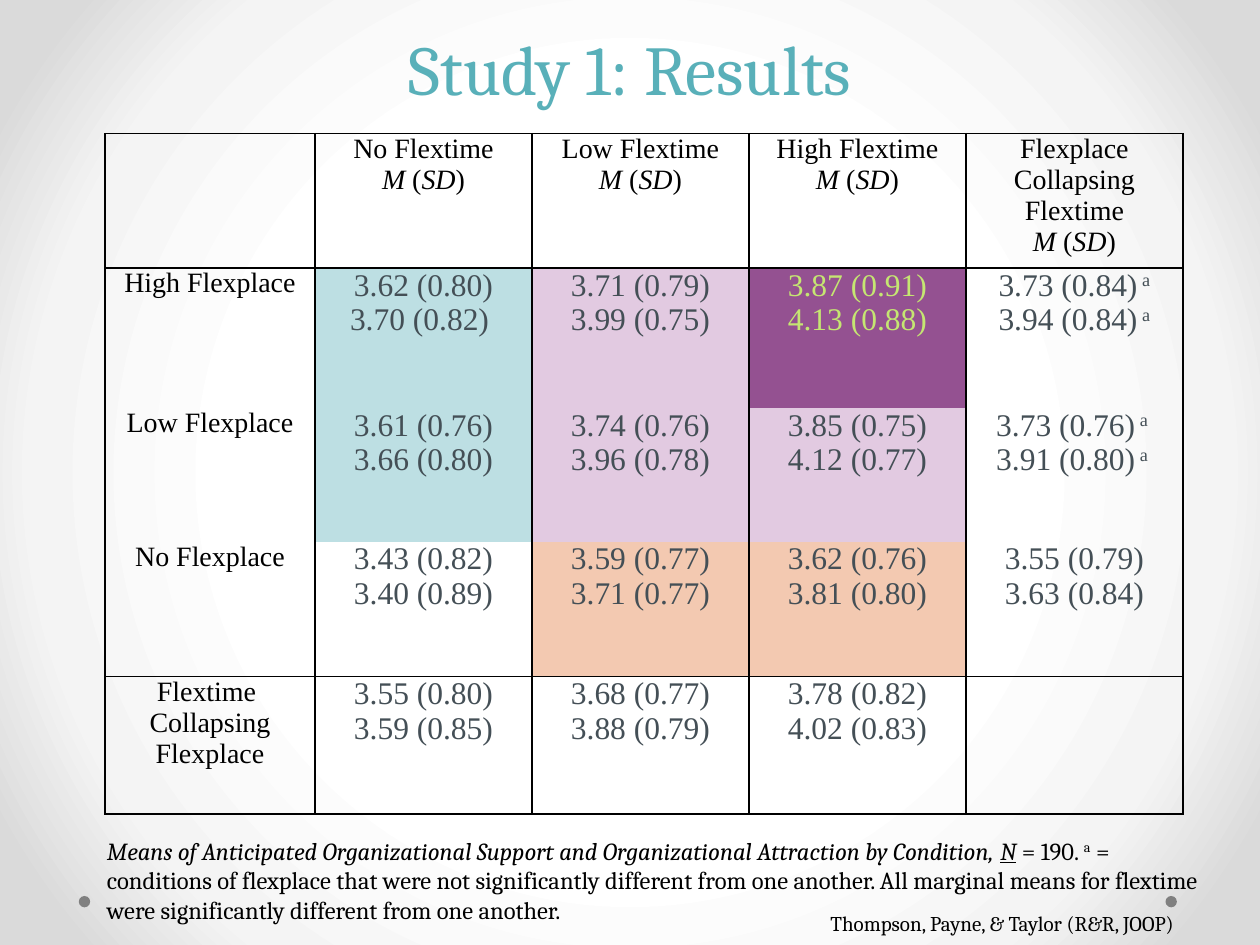
import pptx
import pptx.dml.color
import pptx.enum.shapes
import pptx.enum.text
import pptx.oxml
import pptx.oxml.ns
import pptx.util
from lxml import etree

Pt = pptx.util.Pt
ALIGN = pptx.enum.text.PP_ALIGN
ANCHOR = pptx.enum.text.MSO_ANCHOR
SERIF, TITLE_FONT = "Times New Roman", "Cambria"
BLACK, SLATE, LIME, TEAL = "000000", "444F56", "C5E672", "59B0B9"
AQUA, LILAC, PURPLE, PEACH = "BDDFE3", "E2CAE1", "945191", "F3C9B1"

MEAN_SD = [("M", "i"), (" (", ""), ("SD", "i"), (")", "")]
HEADERS = [["No Flextime"], ["Low Flextime"], ["High Flextime"],
           ["Flexplace", "Collapsing Flextime"]]
ROW_LABELS = [["High Flexplace"], ["Low Flexplace"], ["No Flexplace"],
              ["Flextime ", "Collapsing Flexplace"]]
MEANS = [
    [["3.62 (0.80)", "3.70 (0.82) "], ["3.71 (0.79)", "3.99 (0.75)"],
     ["3.87 (0.91)", "4.13 (0.88)"],
     [[("3.73 (0.84)", ""), (" a", "^")], [("3.94 (0.84)", ""), (" a", "^")]]],
    [["3.61 (0.76)", "3.66 (0.80)"], ["3.74 (0.76)", "3.96 (0.78)"],
     ["3.85 (0.75)", "4.12 (0.77)"],
     [[("3.73 (0.76)", ""), (" a ", "^")], [("3.91 (0.80)", ""), (" a ", "^")]]],
    [["3.43 (0.82)", "3.40 (0.89)"], ["3.59 (0.77)", "3.71 (0.77)"],
     ["3.62 (0.76)", "3.81 (0.80)"], ["3.55 (0.79)", "3.63 (0.84)"]],
    [["3.55 (0.80)", "3.59 (0.85)"], ["3.68 (0.77)", "3.88 (0.79)"],
     ["3.78 (0.82)", "4.02 (0.83)"], []],
]
FILLS = [[AQUA, LILAC, PURPLE, None], [AQUA, LILAC, LILAC, None],
         [None, PEACH, PEACH, None], [None] * 4]
COLUMN_WIDTHS = [120, 124, 124, 124, 124]
ROW_HEIGHTS = [73.5, 80, 76.5, 77, 78.5]
RULED_ABOVE, RULED_BELOW = (0, 1, 4), (0, 3, 4)

NOTE = [
    ("Means of Anticipated Organizational Support and Organizational "
     "Attraction by Condition, ", "i"),
    ("N", "iu"), (" = 190. ", ""), ("a", "^"),
    (" = conditions of flexplace that were not significantly different from "
     "one another. All marginal means for flextime were significantly "
     "different from one another.", ""),
]


def rgb(color):
    return pptx.dml.color.RGBColor.from_string(color)


def paint_background(page):
    """Fill the page with a radial gradient, white in the middle."""
    stops = [(50, "FFFFFF"), (76, "F4F4F4"), (92, "DADADA")]
    stop_xml = "".join(f'<a:gs pos="{place * 1000}"><a:srgbClr val="{color}"/></a:gs>'
                       for place, color in stops)
    background = pptx.oxml.parse_xml(
        f'<p:bg {pptx.oxml.ns.nsdecls("p", "a")}><p:bgPr><a:gradFill rotWithShape="1">'
        f'<a:gsLst>{stop_xml}</a:gsLst><a:path path="circle">'
        '<a:fillToRect l="50000" t="50000" r="50000" b="50000"/></a:path>'
        '</a:gradFill><a:effectLst/></p:bgPr></p:bg>')
    page.element.cSld.insert(0, background)


def write(frame, paragraphs, font, size, color, align):
    """Each paragraph is a string or a list of (text, marks): i, u, ^ (raised)."""
    for index, content in enumerate(paragraphs):
        para = frame.paragraphs[0] if index == 0 else frame.add_paragraph()
        para.alignment = align
        spans = [(content, "")] if isinstance(content, str) else content
        for text, marks in spans:
            span = para.add_run()
            span.text = text
            span.font.name, span.font.size = font, Pt(size)
            span.font.color.rgb = rgb(color)
            span.font.italic = "i" in marks
            span.font.underline = "u" in marks
            if "^" in marks:
                span.font._element.set("baseline", "30000")


def add_text(page, left, top, width, height, content, size, color, align,
             anchor=ANCHOR.TOP):
    box = page.shapes.add_textbox(Pt(left), Pt(top), Pt(width), Pt(height))
    box.text_frame.word_wrap = True
    box.text_frame.vertical_anchor = anchor
    write(box.text_frame, [content], TITLE_FONT, size, color, align)


def add_dot(page, left, top, size):
    dot = page.shapes.add_shape(pptx.enum.shapes.MSO_SHAPE.OVAL,
                                Pt(left), Pt(top), Pt(size), Pt(size))
    dot.shadow.inherit = False
    dot.fill.solid()
    dot.fill.fore_color.rgb = rgb("808080")
    dot.line.fill.background()


def set_borders(cell, row):
    ruled = {"L": True, "R": True, "T": row in RULED_ABOVE, "B": row in RULED_BELOW}
    properties = cell._tc.get_or_add_tcPr()
    for index, (side, visible) in enumerate(ruled.items()):
        line = etree.Element(pptx.oxml.ns.qn(f"a:ln{side}"), w=str(Pt(1)))
        if visible:
            fill = etree.SubElement(line, pptx.oxml.ns.qn("a:solidFill"))
            etree.SubElement(fill, pptx.oxml.ns.qn("a:srgbClr"), val=BLACK)
        else:
            etree.SubElement(line, pptx.oxml.ns.qn("a:noFill"))
        properties.insert(index, line)


def fill_cell(cell, row, paragraphs, size, color, fill=None):
    cell.margin_left = cell.margin_right = Pt(5)
    cell.margin_top = cell.margin_bottom = 0
    write(cell.text_frame, paragraphs, SERIF, size, color, ALIGN.CENTER)
    if fill:
        cell.fill.solid()
        cell.fill.fore_color.rgb = rgb(fill)
    else:
        cell.fill.background()
    set_borders(cell, row)


def add_results_table(page):
    table = page.shapes.add_table(
        len(ROW_HEIGHTS), len(COLUMN_WIDTHS), Pt(60), Pt(76.3),
        Pt(sum(COLUMN_WIDTHS)), Pt(sum(ROW_HEIGHTS))).table
    table.first_row = table.horz_banding = False
    for column, width in zip(table.columns, COLUMN_WIDTHS):
        column.width = Pt(width)
    for row, height in zip(table.rows, ROW_HEIGHTS):
        row.height = Pt(height)

    fill_cell(table.cell(0, 0), 0, [], 16, BLACK)
    for column, header in enumerate(HEADERS, 1):
        fill_cell(table.cell(0, column), 0, header + [MEAN_SD], 16, BLACK)
    for row, (label, means, fills) in enumerate(zip(ROW_LABELS, MEANS, FILLS), 1):
        fill_cell(table.cell(row, 0), row, label, 16, BLACK)
        for column, (values, fill) in enumerate(zip(means, fills), 1):
            color = LIME if fill == PURPLE else SLATE
            fill_cell(table.cell(row, column), row, values, 18, color, fill)


def main():
    deck = pptx.Presentation()
    deck.slide_width, deck.slide_height = Pt(720), Pt(540)
    page = deck.slides.add_slide(deck.slide_layouts[6])
    paint_background(page)
    for left in (666, 45):
        add_dot(page, left, 512, 6.5)
    add_text(page, 24, -1, 672, 67, "Study 1: Results", 40, TEAL,
             ALIGN.CENTER, ANCHOR.BOTTOM)
    add_results_table(page)
    add_text(page, 54, 474, 642, 75, NOTE, 14, BLACK, ALIGN.LEFT)
    add_text(page, 300, 517, 378, 22, "Thompson, Payne, & Taylor (R&R, JOOP)",
             12, BLACK, ALIGN.RIGHT)
    deck.save("out.pptx")


if __name__ == "__main__":
    main()
